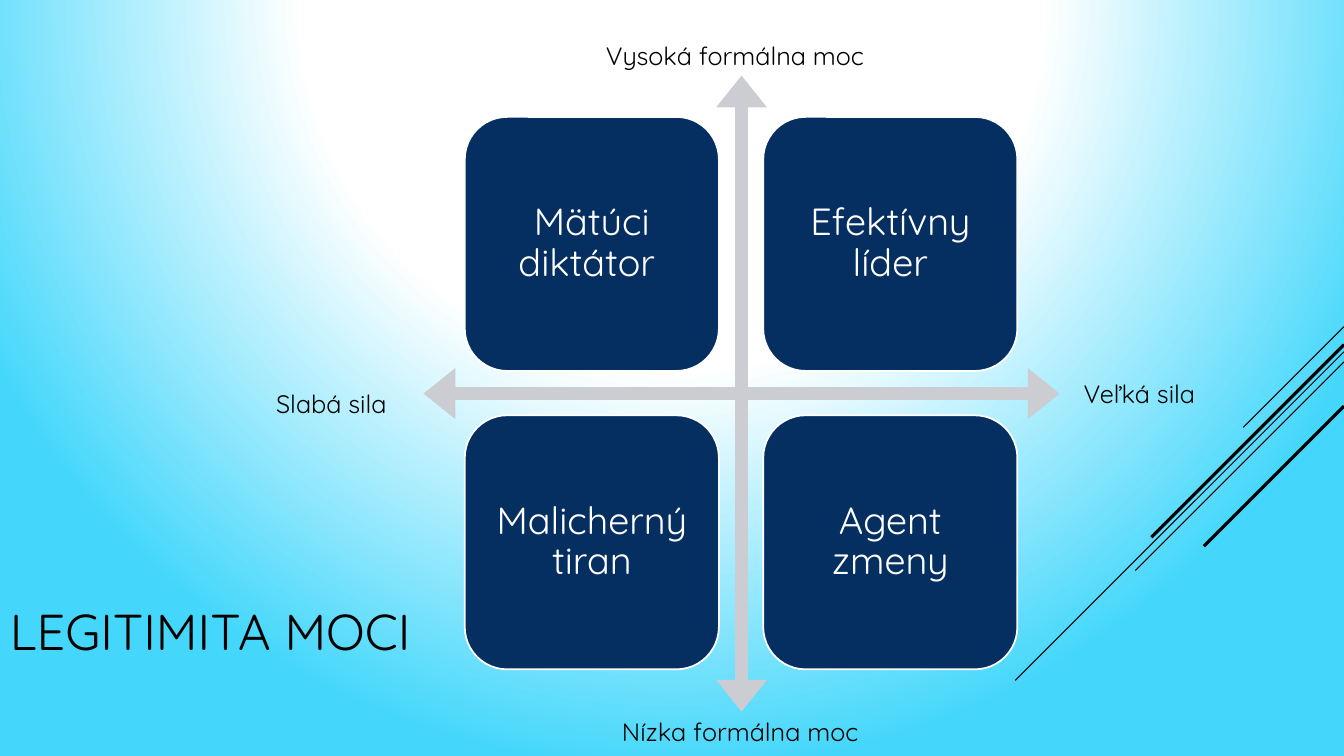
from typing import NamedTuple

from lxml import etree
from pptx import Presentation
from pptx.dml.color import RGBColor
from pptx.enum.shapes import MSO_CONNECTOR, MSO_SHAPE
from pptx.enum.text import MSO_ANCHOR, MSO_AUTO_SIZE, PP_ALIGN
from pptx.oxml import parse_xml
from pptx.oxml.ns import nsdecls, qn
from pptx.util import Inches, Pt

STRAIGHT = MSO_CONNECTOR.STRAIGHT
QUAD_ARROW, ROUNDED = MSO_SHAPE.QUAD_ARROW, MSO_SHAPE.ROUNDED_RECTANGLE
TOP, MIDDLE = MSO_ANCHOR.TOP, MSO_ANCHOR.MIDDLE
LEFT, CENTER = PP_ALIGN.LEFT, PP_ALIGN.CENTER
FIT_SHAPE, NO_FIT = MSO_AUTO_SIZE.SHAPE_TO_FIT_TEXT, MSO_AUTO_SIZE.NONE

FONT = "Quicksand"
BLACK, WHITE, NAVY, GREY, SKY = "000000", "FFFFFF", "052F61", "CCCDD2", "45D7FB"
SLIDE_WIDTH, SLIDE_HEIGHT = 13.33, 7.5
MATRIX_LEFT, MATRIX_TOP, MATRIX_SIZE = 4.2, 0.75, 6.31
TILE_SIZE, TILE_STEP, TILE_MARGIN = 2.52, 2.96, 0.41
TILE_INSET = 0.11


class Stripe(NamedTuple):
    """Diagonal line running down and left from the right slide edge."""
    top: float
    length: float
    weight: float


class Label(NamedTuple):
    text: str
    left: float
    top: float
    width: float


STRIPES = [
    Stripe(3.24, 1.0, 0.75),
    Stripe(3.49, 3.26, 0.75),
    Stripe(3.59, 2.07, 0.75),
    Stripe(3.42, 1.91, 2.25),
    Stripe(4.03, 1.39, 2.25),
]
QUADRANTS = [
    ["Mätúci diktátor ", "Efektívny líder"],
    ["Malicherný tiran", "Agent zmeny"],
]
AXIS_LABELS = [
    Label("Vysoká formálna moc", 5.91, 0.35, 2.88),
    Label("Nízka formálna moc", 6.07, 7.06, 2.65),
    Label("Veľká sila", 10.65, 3.7, 1.34),
    Label("Slabá sila", 2.64, 3.8, 1.34),
]


def color(value: str) -> RGBColor:
    return RGBColor.from_string(value)


def write_text(shape, text: str, *, size: float, ink: str = BLACK, align=LEFT,
               anchor=TOP, wrap: bool = True, fit=NO_FIT,
               inset: float | None = None, spacing: float | None = None) -> None:
    frame = shape.text_frame
    frame.word_wrap = wrap
    frame.auto_size = fit
    frame.vertical_anchor = anchor
    if inset is not None:
        frame.margin_left = frame.margin_right = Inches(inset)
        frame.margin_top = frame.margin_bottom = Inches(inset)
    para = frame.paragraphs[0]
    para.alignment = align
    para.line_spacing = spacing
    span = para.add_run()
    span.text = text
    span.font.name = FONT
    span.font.size = Pt(size)
    span.font.color.rgb = color(ink)


def paint_background(page) -> None:
    """Radial gradient centred on the top edge."""
    background = parse_xml(
        f'<p:bg {nsdecls("p", "a")}><p:bgPr><a:gradFill><a:gsLst>'
        f'<a:gs pos="48000"><a:srgbClr val="{WHITE}"/></a:gs>'
        f'<a:gs pos="100000"><a:srgbClr val="{SKY}"/></a:gs></a:gsLst>'
        '<a:path path="circle"><a:fillToRect b="100000"/></a:path>'
        '</a:gradFill><a:effectLst/></p:bgPr></p:bg>')
    page.element.find(qn("p:cSld")).insert(0, background)


def draw_stripe(page, stripe: Stripe) -> None:
    line = page.shapes.add_connector(
        STRAIGHT, Inches(SLIDE_WIDTH), Inches(stripe.top),
        Inches(SLIDE_WIDTH - stripe.length), Inches(stripe.top + stripe.length))
    line.line.color.rgb = color(BLACK)
    line.line.width = Pt(stripe.weight)
    etree.SubElement(line.element.spPr, qn("a:effectLst"))


def add_filled_shape(page, kind, left: float, top: float, size: float, fill: str):
    shape = page.shapes.add_shape(
        kind, Inches(left), Inches(top), Inches(size), Inches(size))
    shape.shadow.inherit = False
    shape.fill.solid()
    shape.fill.fore_color.rgb = color(fill)
    shape.line.fill.background()
    return shape


def add_text_box(page, label: Label, height: float):
    return page.shapes.add_textbox(
        Inches(label.left), Inches(label.top), Inches(label.width), Inches(height))


def draw_matrix(page) -> None:
    arrows = add_filled_shape(
        page, QUAD_ARROW, MATRIX_LEFT, MATRIX_TOP, MATRIX_SIZE, GREY)
    for index, ratio in enumerate((0.02, 0.04, 0.05)):
        arrows.adjustments[index] = ratio
    for row, names in enumerate(QUADRANTS):
        for column, name in enumerate(names):
            tile = add_filled_shape(
                page, ROUNDED,
                MATRIX_LEFT + TILE_MARGIN + column * TILE_STEP,
                MATRIX_TOP + TILE_MARGIN + row * TILE_STEP, TILE_SIZE, NAVY)
            tile.line.color.rgb = color(WHITE)
            tile.line.width = Pt(1.25)
            write_text(tile, name, size=27, ink=WHITE, align=CENTER,
                       anchor=MIDDLE, inset=TILE_INSET, spacing=0.9)


def main() -> None:
    deck = Presentation()
    deck.slide_width, deck.slide_height = Inches(SLIDE_WIDTH), Inches(SLIDE_HEIGHT)
    page = deck.slides.add_slide(deck.slide_layouts[6])
    paint_background(page)
    for stripe in STRIPES:
        draw_stripe(page, stripe)
    title = Label("LEGITIMITA MOCI", 0, 4.91, 5.61)
    write_text(add_text_box(page, title, 2.68), title.text, size=36, anchor=MIDDLE)
    draw_matrix(page)
    for label in AXIS_LABELS:
        write_text(add_text_box(page, label, 0.4), label.text, size=18,
                   wrap=False, fit=FIT_SHAPE)
    deck.save("out.pptx")


if __name__ == "__main__":
    main()
